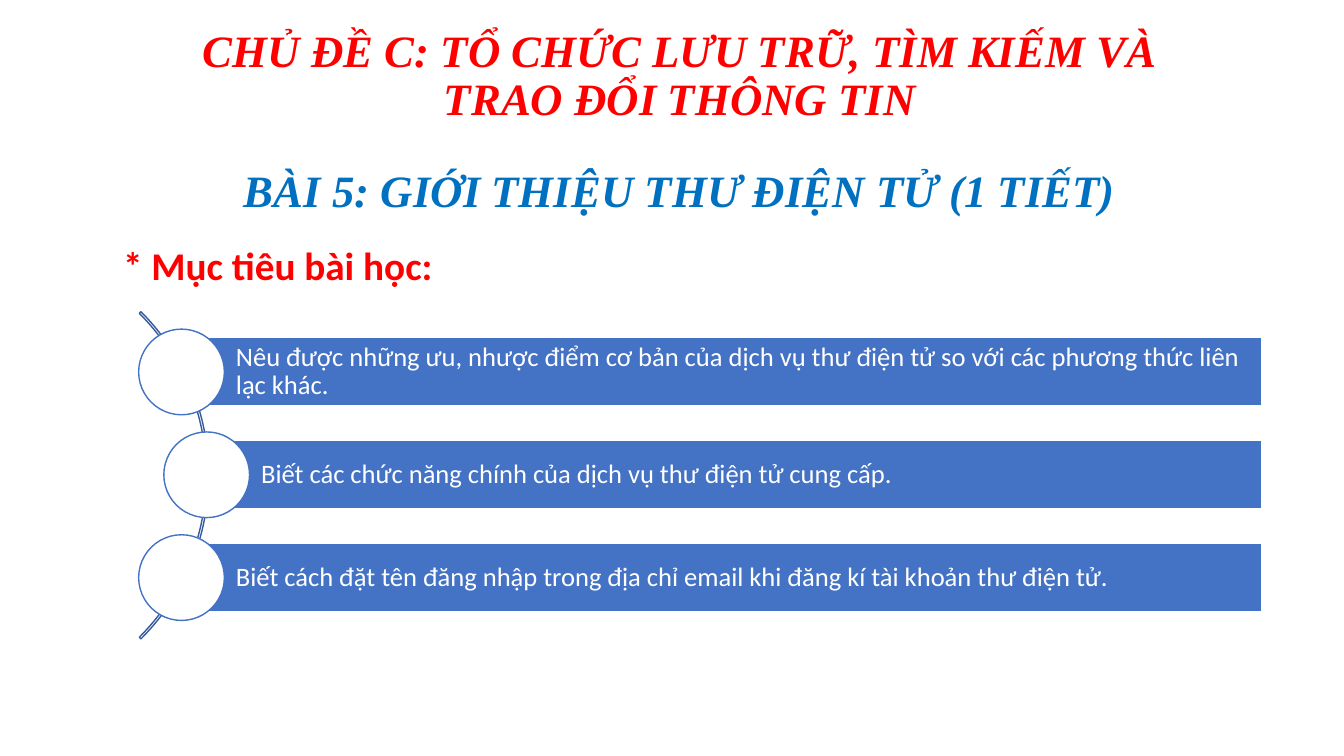
from lxml.etree import SubElement
from pptx import Presentation
from pptx.dml.color import RGBColor
from pptx.enum.shapes import MSO_SHAPE as Shape
from pptx.enum.text import MSO_ANCHOR as Anchor, MSO_AUTO_SIZE as AutoSize, PP_ALIGN as Align
from pptx.oxml.ns import qn
from pptx.util import Inches, Pt


def color(value):
    return RGBColor.from_string(value)


def add_outlined(kind, left, top, width, height, fill, line):
    shape = slide.shapes.add_shape(kind, Inches(left), Inches(top), Inches(width), Inches(height))
    shape.shadow.inherit = False
    if fill:
        shape.fill.solid()
        shape.fill.fore_color.rgb = color(fill)
    else:
        shape.fill.background()
    shape.line.color.rgb = color(line)
    shape.line.width = Pt(1)
    return shape


presentation = Presentation()
presentation.slide_width = Inches(13.33)
presentation.slide_height = Inches(7.5)
slide = presentation.slides.add_slide(presentation.slide_layouts[3])

headings = [
    ("CHỦ ĐỀ C: TỔ CHỨC LƯU TRỮ, TÌM KIẾM VÀ TRAO ĐỔI THÔNG TIN",
     (1.33, 0.1, 10.83, 1.33), Anchor.MIDDLE, Align.CENTER, 0, "Times New Roman", 32, "FF0000", True),
    ("BÀI 5: GIỚI THIỆU THƯ ĐIỆN TỬ (1 TIẾT)",
     (1.33, 1.43, 10.83, 0.97), Anchor.MIDDLE, Align.CENTER, 0, "Times New Roman", 32, "0070C0", True),
    ("* Mục tiêu bài học:",
     (1.03, 2.4, 11.13, 0.61), Anchor.TOP, Align.LEFT, 0.09, "Calibri", 28, "FF0000", False),
]
for placeholder, heading in zip(slide.placeholders, headings):
    text, box, anchor, align, indent, font_name, size, font_color, italic = heading
    placeholder.left, placeholder.top, placeholder.width, placeholder.height = map(Inches, box)
    text_frame = placeholder.text_frame
    text_frame.text = text
    text_frame.auto_size = AutoSize.NONE
    text_frame.vertical_anchor = anchor
    paragraph = text_frame.paragraphs[0]
    properties = paragraph._p.get_or_add_pPr()
    properties.set("marL", str(Inches(indent)))
    properties.set("indent", "0")
    SubElement(properties, qn("a:buNone"))
    paragraph.alignment = align
    paragraph.line_spacing = 0.9
    paragraph.space_before = Pt(0)
    font = paragraph.runs[0].font
    font.name = font_name
    font.size = Pt(size)
    font.bold = True
    font.italic = italic
    font.color.rgb = color(font_color)

arc = add_outlined(Shape.BLOCK_ARC, -2.52, 2.42, 4.59, 4.59, None, "365B9D")
arc.adjustments[0] = 189
arc.adjustments[1] = 27
arc.adjustments[2] = 0.005

goals = [
    (1.8, "Nêu được những ưu, nhược điểm cơ bản của dịch vụ thư điện tử so với các phương thức liên lạc khác."),
    (2.05, "Biết các chức năng chính của dịch vụ thư điện tử cung cấp."),
    (1.8, "Biết cách đặt tên đăng nhập trong địa chỉ email khi đăng kí tài khoản thư điện tử."),
]
right_edge = 12.51
bar_height = 0.68
diameter = 0.85
for index, (left, goal) in enumerate(goals):
    middle = 3.69 + 1.02 * index
    bar = add_outlined(Shape.RECTANGLE, left, middle - bar_height / 2,
                       right_edge - left, bar_height, "4472C4", "FFFFFF")
    text_frame = bar.text_frame
    text_frame.text = goal
    text_frame.word_wrap = True
    text_frame.vertical_anchor = Anchor.MIDDLE
    text_frame.margin_left = Inches(0.54)
    text_frame.margin_top = text_frame.margin_right = text_frame.margin_bottom = Inches(0.05)
    paragraph = text_frame.paragraphs[0]
    paragraph.alignment = Align.LEFT
    paragraph.line_spacing = 0.9
    font = paragraph.runs[0].font
    font.name = "Calibri"
    font.size = Pt(19)
    font.color.rgb = color("FFFFFF")
    add_outlined(Shape.OVAL, left - diameter / 2, middle - diameter / 2,
                 diameter, diameter, "FFFFFF", "4472C4")

presentation.save("out.pptx")
